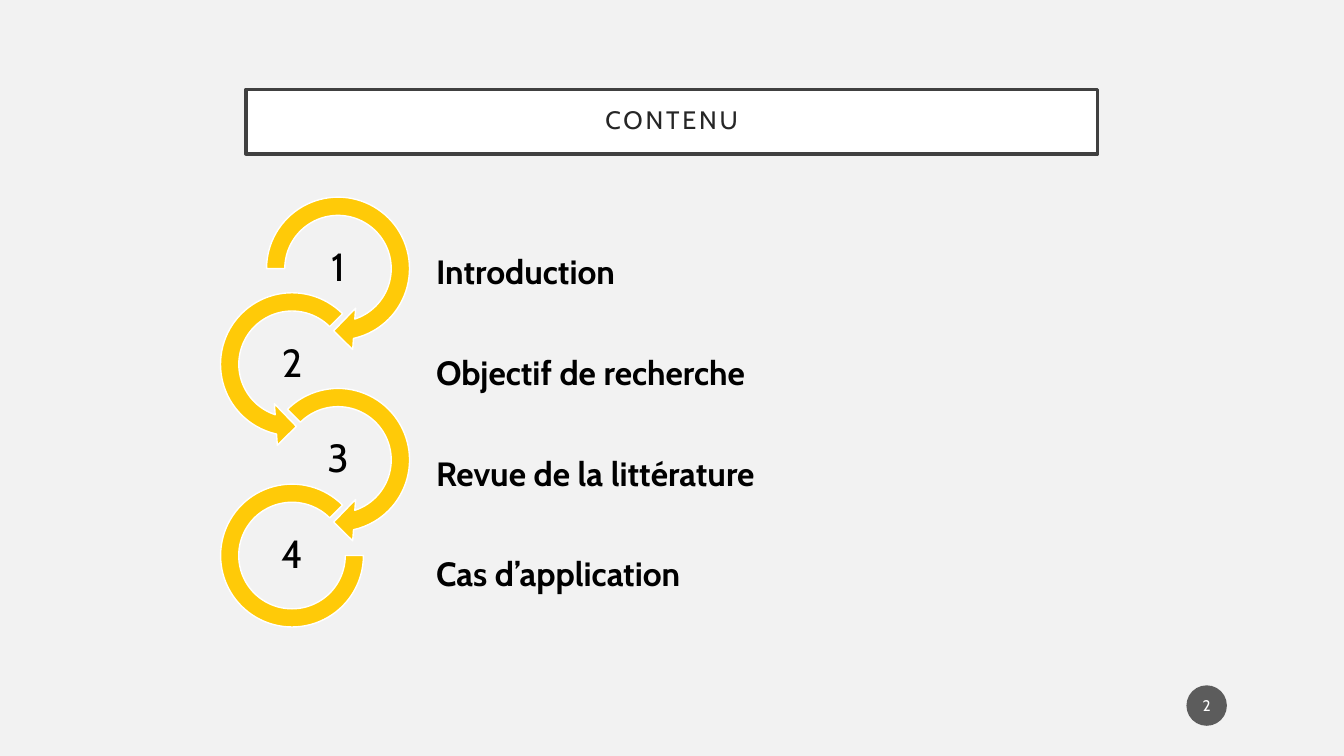
from lxml import etree
from pptx import Presentation
from pptx.dml.color import RGBColor
from pptx.enum.shapes import MSO_SHAPE
from pptx.enum.text import MSO_ANCHOR, PP_ALIGN
from pptx.oxml.ns import qn
from pptx.util import Cm, Pt

RECT, OVAL = MSO_SHAPE.RECTANGLE, MSO_SHAPE.OVAL
RIGHT_ARROW, LEFT_ARROW = MSO_SHAPE.CIRCULAR_ARROW, MSO_SHAPE.LEFT_CIRCULAR_ARROW
ARC = MSO_SHAPE.BLOCK_ARC
TOP, MIDDLE = MSO_ANCHOR.TOP, MSO_ANCHOR.MIDDLE
LEFT, CENTER = PP_ALIGN.LEFT, PP_ALIGN.CENTER

# Content
TITLE = "CONTENU"
PAGE = "2"
TOPICS = ["Introduction", "Objectif de recherche",
          "Revue de la littérature", "Cas d’application"]
# Preset, diameter in cm, adjustments
RINGS = [
    (RIGHT_ARROW, 4.19, (0.11, 11.42, 45, 108, 0.125)),
    (LEFT_ARROW, 4.19, (0.11, 11.42, 63, 189, 0.125)),
    (RIGHT_ARROW, 4.19, (0.11, 11.42, 45, 135, 0.125)),
    (ARC, 3.6, (0, 189, 0.127)),
]

THEME = {
    "font": "Cabin",
    "back": "F2F2F2", "white": "FFFFFF", "black": "000000",
    "ring": "FFCA08", "frame": "404040", "title": "262626", "badge": "1D1D1D",
    "title_pt": 18, "topic_pt": 24, "number_pt": 28, "page_pt": 11,
}

# Layout in cm
RING_X = (8.52, 7.36)
RING_Y, RING_STEP = 6.77, 2.41
NUMBER_W, NUMBER_H = 2.34, 1.17


def color(name):
    return RGBColor.from_string(THEME[name])


def add_shape(s, preset, box, fill, line=None, width=0):
    sp = s.shapes.add_shape(preset, *map(Cm, box))
    sp.shadow.inherit = False
    sp.fill.solid()
    sp.fill.fore_color.rgb = color(fill)
    if line:
        sp.line.color.rgb = color(line)
        sp.line.width = Pt(width)
    else:
        sp.line.fill.background()
    return sp


def write(sp, lines, size, ink, insets, anchor=MIDDLE, align=CENTER,
          spacing=1.0, bold=False):
    tf = sp.text_frame
    frame = {"word_wrap": True, "vertical_anchor": anchor,
             "margin_left": Cm(insets[0]), "margin_right": Cm(insets[0]),
             "margin_top": Cm(insets[1]), "margin_bottom": Cm(insets[1])}
    for name, value in frame.items():
        setattr(tf, name, value)
    for i, line in enumerate(lines):
        p = tf.add_paragraph() if i else tf.paragraphs[0]
        p.alignment, p.line_spacing = align, spacing
        r = p.add_run()
        r.text = line
        font = {"name": THEME["font"], "size": Pt(THEME[size]), "bold": bold}
        for name, value in font.items():
            setattr(r.font, name, value)
        r.font.color.rgb = color(ink)
    return tf


def main():
    prs = Presentation()
    prs.slide_width, prs.slide_height = Cm(33.87), Cm(19.05)
    s = prs.slides.add_slide(prs.slide_layouts[6])
    s.background.fill.solid()
    s.background.fill.fore_color.rgb = color("back")

    # Page badge, 70 % opaque
    badge = add_shape(s, OVAL, (29.9, 17.27, 1.02, 1.02), "badge")
    clr = badge.fill._xPr.find(".//" + qn("a:srgbClr"))
    etree.SubElement(clr, qn("a:alpha"), val="70000")
    write(badge, [PAGE], "page_pt", "white", (0.05, 0.13))

    # Title with spaced letters
    title = add_shape(s, RECT, (6.2, 2.25, 21.46, 1.63), "white", "frame", 2.5)
    tf = write(title, [TITLE], "title_pt", "title", (0.51, 0.51), spacing=0.9)
    tf.paragraphs[0].runs[0].font._element.set("spc", "200")

    # Topics
    topics = s.shapes.add_textbox(Cm(10.74), Cm(4.67), Cm(21.46), Cm(10.6))
    write(topics, TOPICS, "topic_pt", "black", (0.25, 0.13), TOP, LEFT, 2.5, True)

    # Chain of numbered rings, alternating right and left
    for i, (preset, size, adjustments) in enumerate(RINGS):
        x, y = RING_X[i % 2], RING_Y + i * RING_STEP
        ring = add_shape(s, preset, (x - size / 2, y - size / 2, size, size),
                         "ring", "white", 1)
        for k, value in enumerate(adjustments):
            ring.adjustments[k] = value
        box = (x - NUMBER_W / 2, y - NUMBER_H / 2, NUMBER_W, NUMBER_H)
        number = s.shapes.add_textbox(*map(Cm, box))
        write(number, [str(i + 1)], "number_pt", "black", (0.05, 0.05), spacing=0.9)

    prs.save("out.pptx")


if __name__ == "__main__":
    main()
